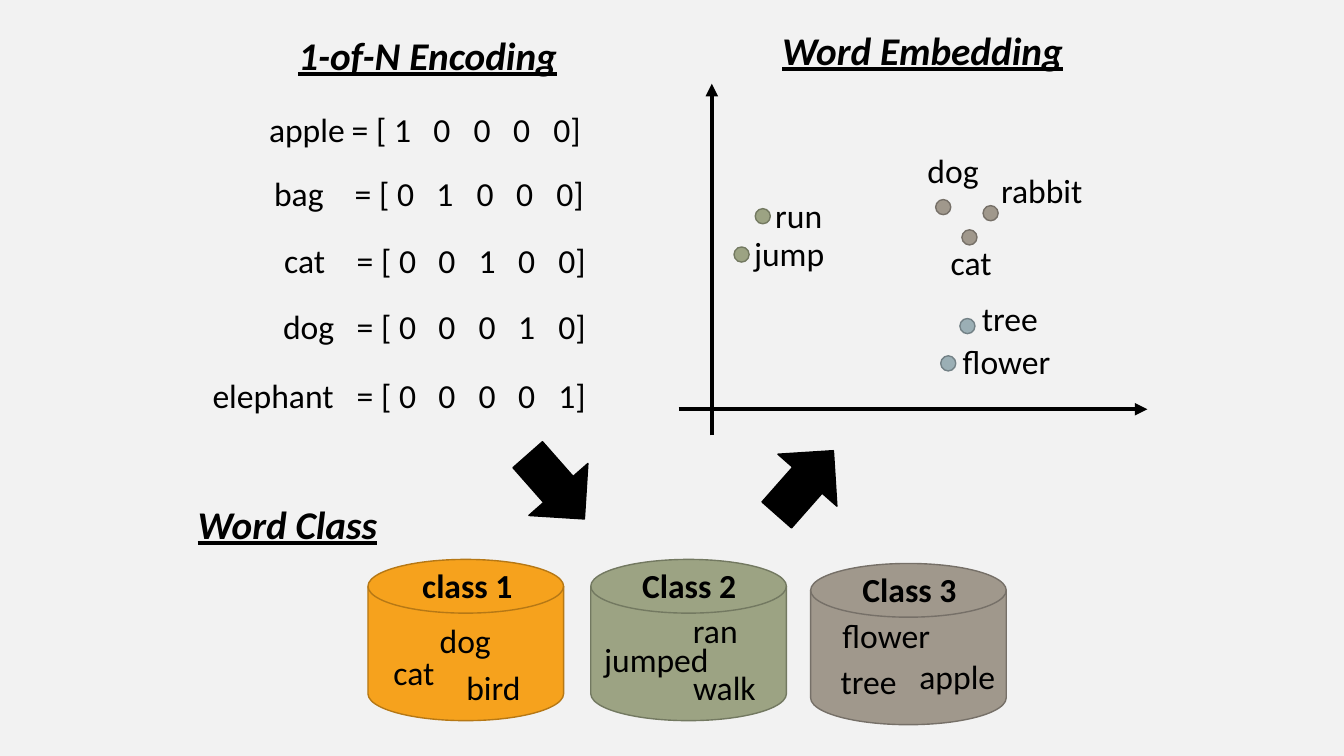
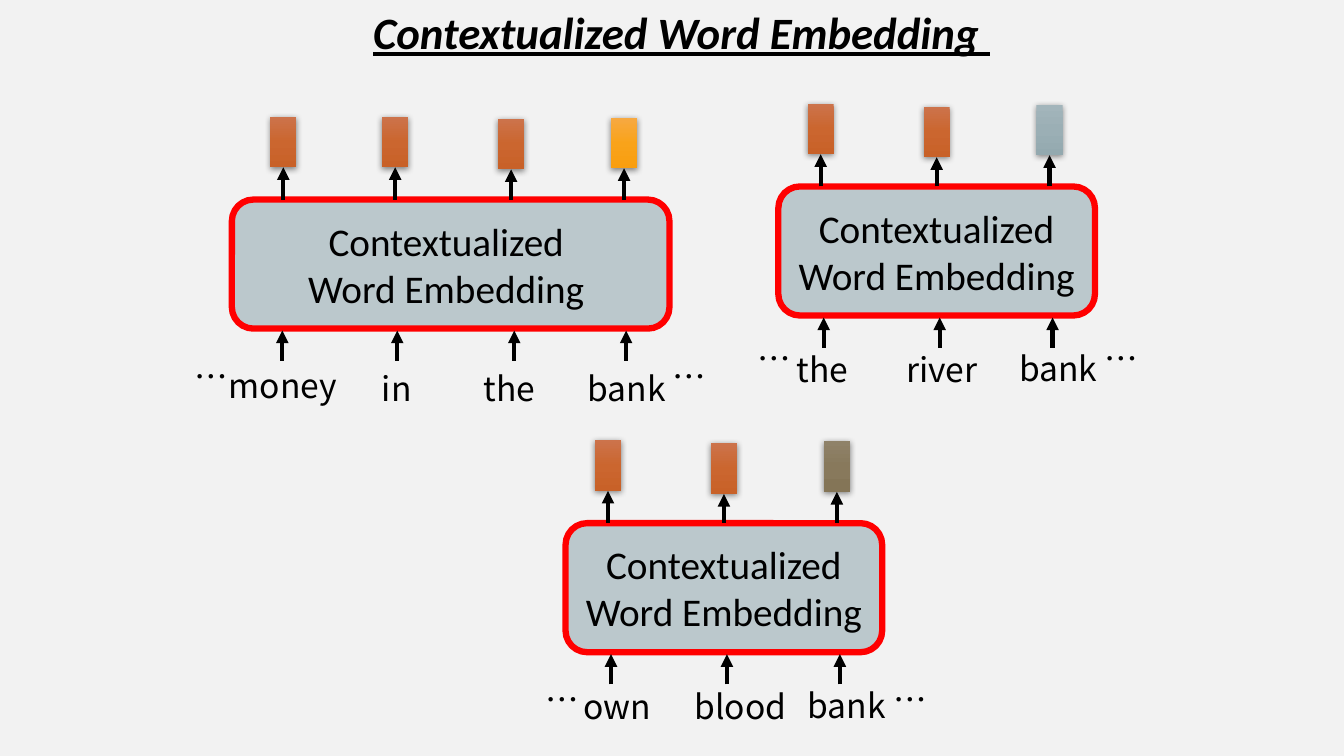
"""Build two slides on word representations and contextualized embeddings."""
from dataclasses import dataclass
from typing import NamedTuple

from lxml.etree import SubElement
from pptx import Presentation
from pptx.dml.color import RGBColor
from pptx.enum.shapes import MSO_CONNECTOR, MSO_SHAPE as Preset
from pptx.enum.text import MSO_ANCHOR as Anchor, MSO_AUTO_SIZE as AutoSize, PP_ALIGN as Align
from pptx.oxml.ns import qn
from pptx.shapes.autoshape import Shape
from pptx.shapes.connector import Connector
from pptx.slide import Slide
from pptx.text.text import TextFrame
from pptx.util import Emu, Pt

PX = 9144
INSET = 10
SANS, CJK = "Calibri", "Noto Sans CJK SC"
COLOURS = {
    "background": "F2F2F2", "ink": "000000", "frame": "FF0000",
    "taupe": "A0988C", "taupe edge": "767068",
    "sage": "9CA383", "sage edge": "737961",
    "mist": "9BAFB5", "mist edge": "738186",
    "orange": "F6A21D", "orange edge": "B67815",
}
GRADIENTS = {
    "model": ("BBC8CC", "B8C6CB"),
    "rust": ("CC734B", "CB662F", "C86128"),
    "orange": ("F7A942", "F9A31A", "F99E0F"),
    "mist": ("A3B5BB", "9BAFB5", "93A9AF"),
    "olive": ("8F8269", "88795C", "847557"),
}
HEADING = dict(size=28, bold=True, italic=True, underline=True)
CENTRED = dict(align=Align.CENTER)


class Label(NamedTuple):
    """A word and the box it stands in."""
    word: str
    left: int
    top: int
    width: int


class Encoding(NamedTuple):
    """A one-hot row: its word, its place and where its equals sign stands."""
    word: str
    left: int
    top: int
    equals: int


class Point(NamedTuple):
    """A dot in the embedding space with its label."""
    left: int
    top: int
    hue: str
    label: Label


@dataclass(frozen=True)
class WordClass:
    """A cylinder with its title and member words."""
    left: int
    top: int
    hue: str
    title: Label
    members: tuple[Label, ...]


@dataclass(frozen=True)
class Model:
    """An embedding model with its input words and output vectors."""
    left: int
    top: int
    caption: str
    sense: str
    words: tuple[Label, ...]
    ellipses: tuple[int, int]
    ellipsis_top: int
    width: int = 314
    stems: tuple[int, ...] = (42, 157, 269)
    feeds: tuple[int, ...] = (45, 160, 272)
    lifts: tuple[int, ...] = (82, 79, 81)


ENCODINGS = (
    Encoding("apple", 257, 103, 349),
    Encoding("bag", 262, 167, 352),
    Encoding("cat", 272, 233, 354),
    Encoding("dog", 271, 299, 354),
    Encoding("elephant", 201, 367, 354),
)
POINTS = (
    Point(928, 198, "taupe", Label("dog", 910, 144, 79)),
    Point(954, 228, "taupe", Label("cat", 933, 235, 79)),
    Point(975, 204, "taupe", Label("rabbit", 983, 164, 108)),
    Point(728, 245, "sage", Label("jump", 738, 226, 128)),
    Point(749, 207, "sage", Label("run", 759, 188, 128)),
    Point(933, 353, "mist", Label("flower", 945, 333, 128)),
    Point(952, 316, "mist", Label("tree", 964, 291, 128)),
)
CLASSES = (
    WordClass(365, 555, "orange", Label("class 1", 344, 556, 239), (
        Label("dog", 413, 610, 97), Label("cat", 362, 642, 97), Label("bird", 441, 657, 97))),
    WordClass(586, 555, "sage", Label("Class 2", 579, 556, 209), (
        Label("ran", 661, 600, 97), Label("jumped", 579, 629, 144), Label("walk", 670, 657, 97))),
    WordClass(804, 559, "taupe", Label("Class 3", 823, 559, 158), (
        Label("flower", 814, 605, 130), Label("tree", 813, 651, 97), Label("apple", 901, 646, 97))),
)
MODELS = (
    Model(230, 198, "Contextualized \nWord Embedding ", "orange", (
        Label("money", 217, 357, 131), Label("in", 369, 360, 50),
        Label("the", 470, 360, 73), Label("bank", 573, 360, 99)),
        (182, 656), 348, width=434, stems=(51, 162, 277, 389),
        feeds=(50, 164, 280, 391), lifts=(82, 82, 80, 81)),
    Model(772, 185, "Contextualized Word Embedding ", "mist", (
        Label("the", 780, 341, 73), Label("river", 889, 341, 91), Label("bank", 1001, 340, 99)),
        (740, 1085), 330),
    Model(561, 519, "Contextualized Word Embedding ", "olive", (
        Label("own", 569, 676, 89), Label("blood", 679, 676, 115), Label("bank", 791, 675, 99)),
        (530, 875), 669),
)


def px(*lengths: int) -> list[Emu]:
    """Turn px lengths into EMU."""
    return [Emu(length * PX) for length in lengths]


def rgb(name: str) -> RGBColor:
    """Look up a named colour."""
    return RGBColor.from_string(COLOURS[name])


def write(frame: TextFrame, content: str, *, size: int = 24, font: str = SANS,
          bold: bool = False, italic: bool = False, underline: bool = False,
          align: Align = Align.LEFT, wrap: bool = True, tabs: tuple[int, ...] = ()) -> None:
    """Fill a text frame with formatted text, one paragraph a line."""
    frame.text = content
    frame.word_wrap = wrap
    for paragraph in frame.paragraphs:
        paragraph.alignment = align
        if tabs:
            stops = SubElement(paragraph._p.get_or_add_pPr(), qn("a:tabLst"))
            for stop in tabs:
                SubElement(stops, qn("a:tab"), pos=str(stop * PX), algn="l")
        for run in paragraph.runs:
            style = run.font
            style.size, style.name = Pt(size), font
            style.bold, style.italic, style.underline = bold, italic, underline
            style.color.rgb = rgb("ink")
            SubElement(run._r.get_or_add_rPr(), qn("a:ea"), typeface=font)


def add_label(slide: Slide, label: Label, height: int = 50, **text_format) -> None:
    """Place a label as a text box."""
    box = slide.shapes.add_textbox(*px(label.left, label.top, label.width, height))
    write(box.text_frame, label.word, **text_format)
    box.text_frame.auto_size = AutoSize.SHAPE_TO_FIT_TEXT


def add_figure(slide: Slide, preset: Preset, left: int, top: int, width: int, height: int,
               fill: str = "", edge: str = "", weight: float = 1) -> Shape:
    """Add a shadowless preset shape, filled and outlined as asked."""
    figure = slide.shapes.add_shape(preset, *px(left, top, width, height))
    figure.shadow.inherit = False
    if fill:
        figure.fill.solid()
        figure.fill.fore_color.rgb = rgb(fill)
    if edge:
        figure.line.color.rgb = rgb(edge)
        figure.line.width = Pt(weight)
    else:
        figure.line.fill.background()
    return figure


def shade(figure: Shape, hue: str) -> None:
    """Fill a shape with evenly spaced gradient stops from top to bottom."""
    figure.fill.gradient()
    figure.fill.gradient_angle = 270
    stops = figure._element.spPr.find(f".//{qn('a:gsLst')}")
    for stop in list(stops):
        stops.remove(stop)
    shades = GRADIENTS[hue]
    for index, value in enumerate(shades):
        stop = SubElement(stops, qn("a:gs"), pos=str(100000 * index // (len(shades) - 1)))
        SubElement(stop, qn("a:srgbClr"), val=value)


def cast_shadow(figure: Shape) -> None:
    """Give a shape a soft shadow below it."""
    effects = figure._element.spPr.find(qn("a:effectLst"))
    shadow = SubElement(effects, qn("a:outerShdw"), blurRad=str(Pt(4.4)), dist=str(Pt(1.2)),
                        dir="5400000", algn="ctr", rotWithShape="0")
    tint = SubElement(shadow, qn("a:srgbClr"), val=COLOURS["ink"])
    SubElement(tint, qn("a:alpha"), val="45000")


def add_arrow(slide: Slide, x1: int, y1: int, x2: int, y2: int) -> Connector:
    """Draw a straight line with an arrowhead at its end."""
    arrow = slide.shapes.add_connector(MSO_CONNECTOR.STRAIGHT, *px(x1, y1, x2, y2))
    arrow.line.color.rgb = rgb("ink")
    arrow.line.width = Pt(3)
    SubElement(arrow.line._get_or_add_ln(), qn("a:tailEnd"), type="triangle")
    SubElement(arrow._element.spPr, qn("a:effectLst"))
    return arrow


def add_encoding(slide: Slide, row: Encoding, position: int) -> None:
    """Write a one-hot row with its digits on tab stops."""
    digits = "\t".join("1" if i == position else "0" for i in range(len(ENCODINGS)))
    equals = row.equals - row.left - INSET
    columns = tuple(equals + 42 + 79 * i // 2 for i in range(len(ENCODINGS)))
    add_label(slide, Label(f"{row.word}\t= [\t{digits}]", row.left, row.top, 444),
              tabs=(equals, *columns))


def add_class(slide: Slide, group: WordClass) -> None:
    """Draw a word class as a cylinder holding its words."""
    add_figure(slide, Preset.FLOWCHART_MAGNETIC_DISK, group.left, group.top, 194, 160,
               group.hue, f"{group.hue} edge")
    add_label(slide, group.title, bold=True, **CENTRED)
    for member in group.members:
        add_label(slide, member, **CENTRED)


def add_model(slide: Slide, model: Model) -> None:
    """Draw a model box with words going in and vectors coming out."""
    box = add_figure(slide, Preset.ROUNDED_RECTANGLE, model.left, model.top, model.width, 128,
                     edge="frame", weight=4.5)
    shade(box, "model")
    box.text_frame.vertical_anchor = Anchor.MIDDLE
    write(box.text_frame, model.caption, size=28, **CENTRED)
    last = len(model.words) - 1
    columns = zip(model.words, model.stems, model.feeds, model.lifts)
    for index, (word, stem, feed, lift) in enumerate(columns):
        add_label(slide, word, font=CJK, wrap=False)
        add_arrow(slide, model.left + feed, model.top + 160, model.left + feed, model.top + 130)
        x = model.left + stem
        vector = add_figure(slide, Preset.RECTANGLE, x - 13, model.top - lift, 26, 50)
        shade(vector, model.sense if index == last else "rust")
        cast_shadow(vector)
        output = add_arrow(slide, x, model.top, x, model.top - 30)
        if stem * 2 == model.width:
            output.begin_connect(box, 0)
        output.end_connect(vector, 2)
    for left in model.ellipses:
        add_label(slide, Label("…", left, model.ellipsis_top, 55), font=CJK, **CENTRED)


def build_representations(slide: Slide) -> None:
    """Show one-hot encoding, word classes and word embedding."""
    add_arrow(slide, 673, 406, 1138, 406)
    add_arrow(slide, 706, 432, 706, 83)
    for point in POINTS:
        add_figure(slide, Preset.OVAL, point.left, point.top, 15, 15,
                   point.hue, f"{point.hue} edge")
        add_label(slide, point.label)
    for position, row in enumerate(ENCODINGS):
        add_encoding(slide, row, position)
    add_label(slide, Label("1-of-N Encoding", 286, 26, 281), 57, wrap=False, **HEADING)
    add_label(slide, Label("Word Embedding", 766, 21, 301), 57, wrap=False, **HEADING)
    add_label(slide, Label("Word Class", 181, 491, 208), 57, **HEADING, **CENTRED)
    for group in CLASSES:
        add_class(slide, group)
    for left, top, turn in ((509, 444, 48.6), (756, 440, -48.6)):
        step = add_figure(slide, Preset.RIGHT_ARROW, left, top, 85, 78, "ink", "ink")
        step.rotation = turn


def build_contextualized(slide: Slide) -> None:
    """Show how the vector of one word changes with its context."""
    title = slide.shapes.title
    title.left, title.top, title.width, title.height = px(360, 0, 639, 64)
    write(title.text_frame, "Contextualized Word Embedding ", wrap=False,
          **{**HEADING, "size": 32})
    title.text_frame.vertical_anchor = Anchor.TOP
    title.text_frame.auto_size = AutoSize.SHAPE_TO_FIT_TEXT
    for model in MODELS:
        add_model(slide, model)


def main() -> None:
    """Build and save the presentation."""
    deck = Presentation()
    deck.slide_width, deck.slide_height = px(1333, 750)
    backdrop = deck.slide_master.background.fill
    backdrop.solid()
    backdrop.fore_color.rgb = rgb("background")
    title_only, blank = deck.slide_layouts[5], deck.slide_layouts[6]
    build_representations(deck.slides.add_slide(blank))
    build_contextualized(deck.slides.add_slide(title_only))
    deck.save("out.pptx")


if __name__ == "__main__":
    main()
